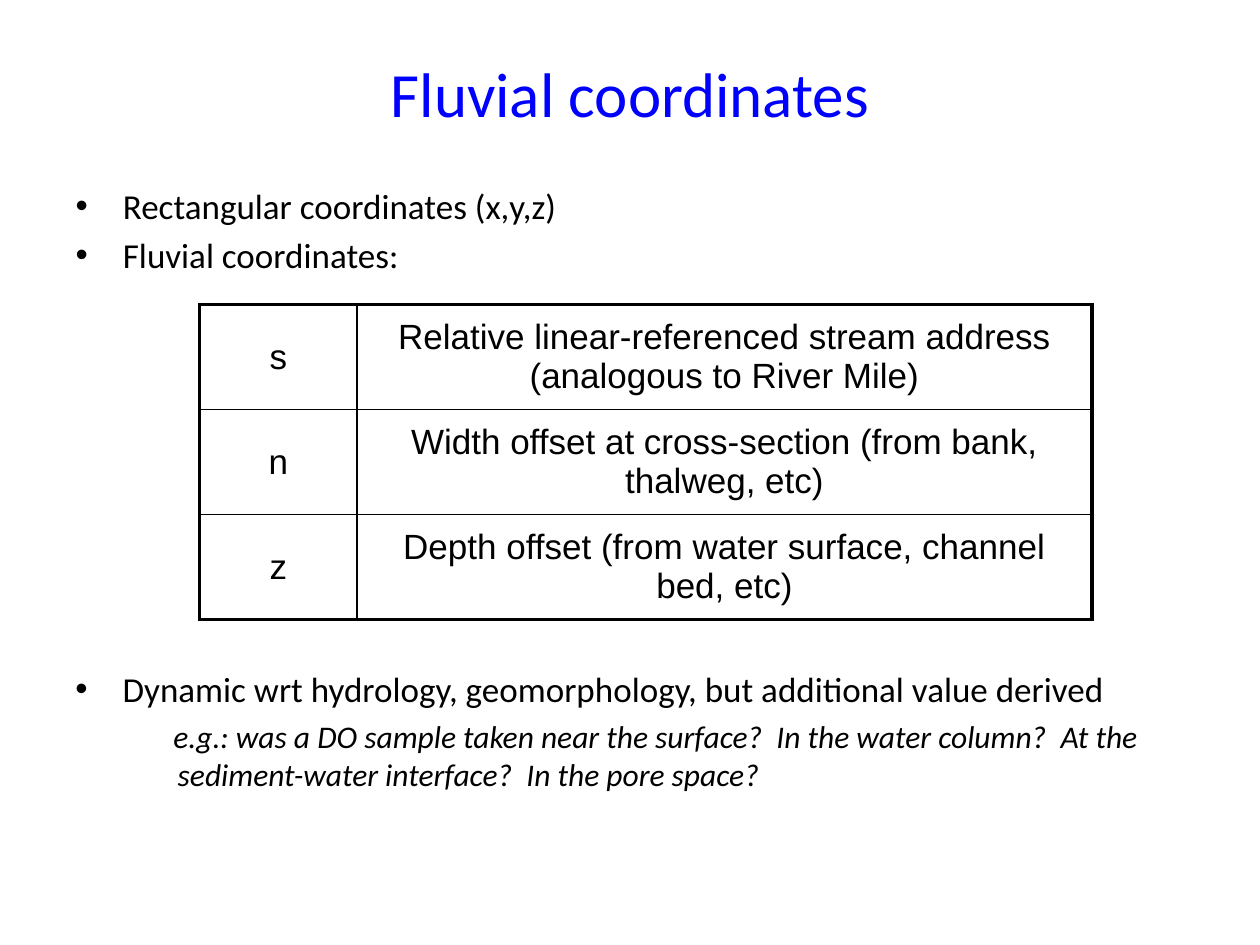
import dataclasses

import lxml.etree
import pptx
import pptx.dml.color
import pptx.enum.text
import pptx.oxml.ns
import pptx.util

Pt = pptx.util.Pt
Align = pptx.enum.text.PP_ALIGN
Anchor = pptx.enum.text.MSO_ANCHOR
qn = pptx.oxml.ns.qn


@dataclasses.dataclass(frozen=True)
class Theme:
    title_color: str = "0000FF"
    ink: str = "000000"
    text_font: str = "Calibri"
    table_font: str = "Arial"
    title_size: int = 36
    body_size: int = 20
    example_size: int = 18
    space_before: int = 4
    outer_line: float = 2.25
    inner_line: float = 1


THEME = Theme()


def place(shape, box):
    shape.left, shape.top, shape.width, shape.height = (Pt(value) for value in box)


def add_run(paragraph, text, size, font=THEME.text_font, color=THEME.ink, italic=False):
    run = paragraph.add_run()
    run.text = text
    run.font.name = font
    run.font.size = Pt(size)
    run.font.italic = italic
    run.font.color.rgb = pptx.dml.color.RGBColor.from_string(color)


def add_title(slide, box, text):
    title = slide.shapes.title
    place(title, box)
    title.text_frame.vertical_anchor = Anchor.MIDDLE
    paragraph = title.text_frame.paragraphs[0]
    paragraph.alignment = Align.CENTER
    add_run(paragraph, text, THEME.title_size, color=THEME.title_color)


def set_indent(paragraph, margin, indent, bullet=None):
    properties = paragraph._p.get_or_add_pPr()
    properties.set("marL", str(Pt(margin)))
    properties.set("indent", str(Pt(indent)))
    if bullet:
        lxml.etree.SubElement(properties, qn("a:buFont"), typeface="Arial")
        lxml.etree.SubElement(properties, qn("a:buChar"), char=bullet)
    else:
        lxml.etree.SubElement(properties, qn("a:buNone"))


def add_list(shape, box, bullets, example=None):
    place(shape, box)
    frame = shape.text_frame
    frame.word_wrap = True
    frame.auto_size = pptx.enum.text.MSO_AUTO_SIZE.NONE
    for index, text in enumerate(bullets):
        paragraph = frame.add_paragraph() if index else frame.paragraphs[0]
        paragraph.space_before = Pt(THEME.space_before)
        set_indent(paragraph, 27, -27, "•")
        add_run(paragraph, text, THEME.body_size)
    if example:
        paragraph = frame.add_paragraph()
        paragraph.level = 1
        paragraph.space_before = Pt(THEME.space_before)
        set_indent(paragraph, 58.5, -2.5)
        add_run(paragraph, example, THEME.example_size, italic=True)


def set_borders(cell, widths):
    properties = cell._tc.get_or_add_tcPr()
    for index, (side, width) in enumerate(widths.items()):
        line = lxml.etree.Element(qn(f"a:ln{side}"), w=str(Pt(width)))
        fill = lxml.etree.SubElement(line, qn("a:solidFill"))
        lxml.etree.SubElement(fill, qn("a:srgbClr"), val=THEME.ink)
        properties.insert(index, line)


def add_coordinate_table(slide, box, column_widths, rows):
    left, top, width, height = (Pt(value) for value in box)
    last_row, last_column = len(rows) - 1, len(column_widths) - 1
    table = slide.shapes.add_table(
        len(rows), len(column_widths), left, top, width, height
    ).table
    table.first_row = table.horz_banding = False
    for column, column_width in zip(table.columns, column_widths):
        column.width = Pt(column_width)
    for row_index, row in enumerate(rows):
        for column_index, text in enumerate(row):
            cell = table.cell(row_index, column_index)
            cell.fill.background()
            cell.vertical_anchor = Anchor.MIDDLE
            outer_sides = {
                "L": column_index == 0,
                "R": column_index == last_column,
                "T": row_index == 0,
                "B": row_index == last_row,
            }
            set_borders(cell, {
                side: THEME.outer_line if outer else THEME.inner_line
                for side, outer in outer_sides.items()
            })
            paragraph = cell.text_frame.paragraphs[0]
            paragraph.alignment = Align.CENTER
            paragraph.space_before = Pt(THEME.space_before)
            add_run(paragraph, text, THEME.body_size, THEME.table_font)


def main():
    presentation = pptx.Presentation()
    presentation.slide_width, presentation.slide_height = Pt(720), Pt(540)
    slide = presentation.slides.add_slide(presentation.slide_layouts[1])
    add_title(slide, (36, 21.6, 648, 62.6), "Fluvial coordinates")
    add_list(
        slide.placeholders[1],
        (36, 102, 318, 66),
        ["Rectangular coordinates (x,y,z)", "Fluvial coordinates:"],
    )
    add_coordinate_table(slide, (114, 174, 510, 180), (90, 420), [
        ("s", "Relative linear-referenced stream address (analogous to River Mile)"),
        ("n", "Width offset at cross-section (from bank, thalweg, etc)"),
        ("z", "Depth offset (from water surface, channel bed, etc)"),
    ])
    closing_box = (36, 378, 648, 84)
    add_list(
        slide.shapes.add_textbox(*(Pt(value) for value in closing_box)),
        closing_box,
        ["Dynamic wrt hydrology, geomorphology, but additional value derived"],
        "e.g.: was a DO sample taken near the surface?  In the water column?  "
        "At the sediment-water interface?  In the pore space?",
    )
    presentation.save("out.pptx")


if __name__ == "__main__":
    main()
